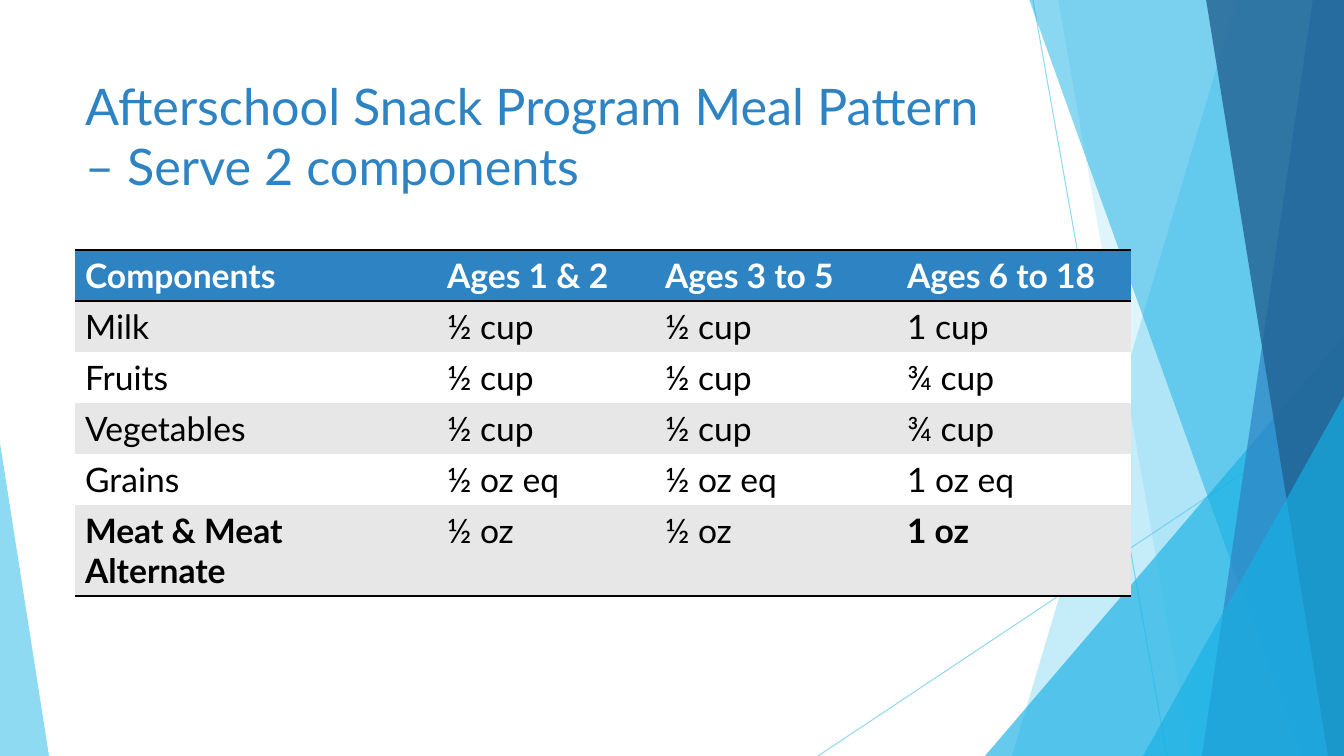
"""Build the afterschool snack meal pattern slide."""
from dataclasses import dataclass

from lxml import etree
from pptx import Presentation
from pptx.dml.color import RGBColor
from pptx.enum.shapes import MSO_CONNECTOR, MSO_SHAPE
from pptx.enum.text import MSO_ANCHOR, MSO_AUTO_SIZE, PP_ALIGN
from pptx.oxml.ns import qn
from pptx.util import Pt

STRAIGHT = MSO_CONNECTOR.STRAIGHT
TRIANGLE = MSO_SHAPE.ISOSCELES_TRIANGLE
NO_GRID_STYLE = "{2D5ABB26-0587-4C30-8999-92F81FD0307C}"


@dataclass(frozen=True)
class Theme:
    font: str = "Lato"
    title_size: int = 36
    table_size: int = 24
    rule_width: int = 2
    hairline_width: float = 0.75
    sky: str = "5FCBEF"
    cyan: str = "17B0E4"
    blue: str = "2E83C3"
    navy: str = "226292"
    gray: str = "E7E7E7"
    white: str = "FFFFFF"
    black: str = "000000"


THEME = Theme()
SLIDE_WIDTH, SLIDE_HEIGHT = 1344, 756
EMU_PER_PX = 12192000 / SLIDE_WIDTH

TITLE = "Afterschool Snack Program Meal Pattern – Serve 2 components"
TITLE_BOX = (75, 70, 947, 145)

MEAL_PATTERN = [
    ("Components", "Ages 1 & 2", "Ages 3 to 5", "Ages 6 to 18"),
    ("Milk", "½ cup", "½ cup", "1 cup"),
    ("Fruits", "½ cup", "½ cup", "¾ cup"),
    ("Vegetables", "½ cup", "½ cup", "¾ cup"),
    ("Grains", "½ oz eq", "½ oz eq", "1 oz eq"),
    ("Meat & Meat Alternate", "½ oz", "½ oz", "1 oz"),
]
BOLD_BODY_TEXTS = {"Meat & Meat Alternate", "1 oz"}
TABLE_LEFT, TABLE_TOP = 75, 250
COLUMN_WIDTHS = (362, 218, 242, 234)
ROW_HEIGHTS = (51, 51, 51, 51, 51, 90)

HAIRLINES = [(1033, 0, 1167, 756), (1344, 406, 818, 756)]
HAIRLINE_OPACITY = 70
BAND_TOP = -1
DECORATIONS = [
    ("band", (1237, 1012), THEME.sky, 36),
    ("band", (1058, 1191), THEME.sky, 20),
    ("triangle", (985, 336, 359, 420, 1), THEME.cyan, 66),
    ("band", (1029, 1301), THEME.cyan, 50),
    ("band", (1313, 1202), THEME.blue, 70),
    ("band", (1206, 1328), THEME.navy, 80),
    ("triangle", (1143, 396, 201, 360, 1), THEME.cyan, 66),
    ("triangle", (0, 443, 49, 313, 0), THEME.sky, 70),
]


def px(*lengths):
    """Turn pixel lengths into EMU."""
    return [round(length * EMU_PER_PX) for length in lengths]


def apply_format(target, values):
    """Set each attribute of the target from a dict."""
    for name, value in values.items():
        setattr(target, name, value)


def format_text(paragraph, size, color, bold=False):
    """Style a paragraph's font."""
    apply_format(paragraph.font, {"name": THEME.font, "size": Pt(size), "bold": bold})
    paragraph.font.color.rgb = RGBColor.from_string(color)


def paint(fill, color):
    """Give a fill one solid color."""
    fill.solid()
    fill.fore_color.rgb = RGBColor.from_string(color)


def set_opacity(shape, percent):
    """Make the colors of a shape partly transparent."""
    for color in shape.element.spPr.iter(qn("a:srgbClr")):
        etree.SubElement(color, qn("a:alpha"), val=str(percent * 1000))


def add_hairline(slide, ends):
    """Draw one thin background line."""
    line = slide.shapes.add_connector(STRAIGHT, *px(*ends))
    line.line.width = Pt(THEME.hairline_width)
    paint(line.line.fill, THEME.sky)
    set_opacity(line, HAIRLINE_OPACITY)
    etree.SubElement(line.element.spPr, qn("a:effectLst"))


def add_decoration(slide, kind, geometry, color, opacity):
    """Draw a band reaching the right slide edge, or a right-angled triangle."""
    if kind == "band":
        top_x, bottom_x = geometry
        builder = slide.shapes.build_freeform(top_x, BAND_TOP, scale=EMU_PER_PX)
        builder.add_line_segments([
            (SLIDE_WIDTH, BAND_TOP),
            (SLIDE_WIDTH, SLIDE_HEIGHT),
            (bottom_x, SLIDE_HEIGHT),
        ])
        shape = builder.convert_to_shape()
    else:
        *box, apex = geometry
        shape = slide.shapes.add_shape(TRIANGLE, *px(*box))
        shape.adjustments[0] = apex
    shape.shadow.inherit = False
    shape.line.fill.background()
    paint(shape.fill, color)
    set_opacity(shape, opacity)


def place_title(slide):
    """Fill the title placeholder and bring it in front of the background."""
    title = slide.shapes.title
    apply_format(title, dict(zip(("left", "top", "width", "height"), px(*TITLE_BOX))))
    frame = title.text_frame
    frame.text = TITLE
    apply_format(frame, {
        "word_wrap": True,
        "auto_size": MSO_AUTO_SIZE.NONE,
        "vertical_anchor": MSO_ANCHOR.TOP,
    })
    paragraph = frame.paragraphs[0]
    paragraph.alignment = PP_ALIGN.LEFT
    format_text(paragraph, THEME.title_size, THEME.blue)
    slide.shapes.element.append(title.element)


def add_rule(cell, edge):
    """Draw a black border on one edge of a cell."""
    properties = cell._tc.get_or_add_tcPr()
    border = etree.SubElement(properties, qn(f"a:{edge}"), w=str(Pt(THEME.rule_width)))
    fill = etree.SubElement(border, qn("a:solidFill"))
    etree.SubElement(fill, qn("a:srgbClr"), val=THEME.black)


def add_meal_table(slide):
    """Build the meal pattern table."""
    box = px(TABLE_LEFT, TABLE_TOP, sum(COLUMN_WIDTHS), sum(ROW_HEIGHTS))
    frame = slide.shapes.add_table(len(MEAL_PATTERN), len(COLUMN_WIDTHS), *box)
    table = frame.table
    next(frame.element.iter(qn("a:tableStyleId"))).text = NO_GRID_STYLE
    for column, width in zip(table.columns, px(*COLUMN_WIDTHS)):
        column.width = width
    for row, height in zip(table.rows, px(*ROW_HEIGHTS)):
        row.height = height
    last_row = len(MEAL_PATTERN) - 1
    for row_index, texts in enumerate(MEAL_PATTERN):
        header = row_index == 0
        background = THEME.blue if header else (THEME.white, THEME.gray)[row_index % 2]
        edges = ("lnT", "lnB") if header else ("lnB",) if row_index == last_row else ()
        for column_index, text in enumerate(texts):
            cell = table.cell(row_index, column_index)
            cell.text = text
            for edge in edges:
                add_rule(cell, edge)
            paint(cell.fill, background)
            format_text(
                cell.text_frame.paragraphs[0],
                THEME.table_size,
                THEME.white if header else THEME.black,
                header or text in BOLD_BODY_TEXTS,
            )


def main():
    """Create and save the presentation."""
    presentation = Presentation()
    presentation.slide_width, presentation.slide_height = px(SLIDE_WIDTH, SLIDE_HEIGHT)
    slide = presentation.slides.add_slide(presentation.slide_layouts[5])
    paint(slide.background.fill, THEME.white)
    for ends in HAIRLINES:
        add_hairline(slide, ends)
    for decoration in DECORATIONS:
        add_decoration(slide, *decoration)
    place_title(slide)
    add_meal_table(slide)
    presentation.save("out.pptx")


if __name__ == "__main__":
    main()
